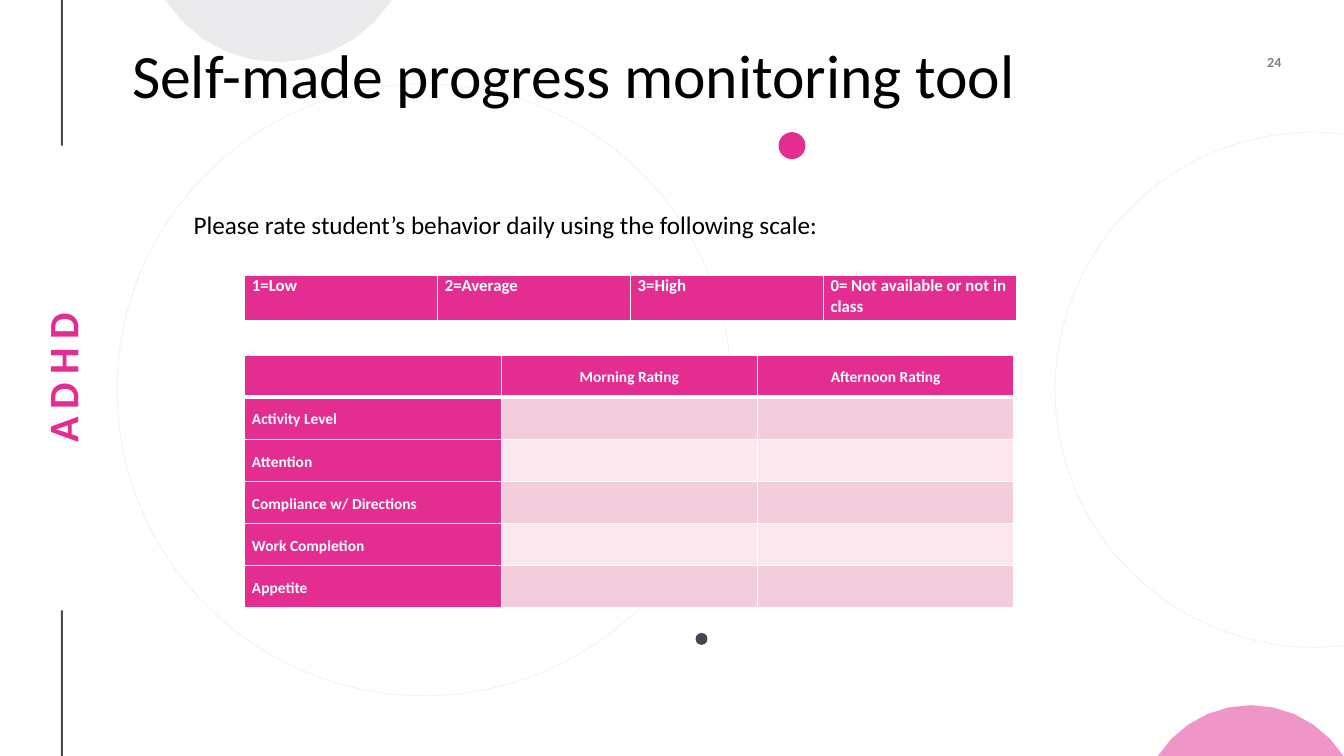
import math
import pptx
import pptx.util
import pptx.dml.color
import pptx.enum.dml
import pptx.enum.shapes
import pptx.enum.text
import pptx.oxml.ns
import lxml.etree

Cm, Pt = pptx.util.Cm, pptx.util.Pt
RGB = pptx.dml.color.RGBColor
PINK = RGB(0xE3, 0x2D, 0x91)
ROSE = RGB(0xF4, 0xCD, 0xDC)
BLUSH = RGB(0xFA, 0xE8, 0xEE)
SLATE = RGB(0x45, 0x45, 0x51)
GREY = RGB(0xD8, 0xD9, 0xDC)
BLACK = RGB(0, 0, 0)
WHITE = RGB(255, 255, 255)
ALIGN = pptx.enum.text.PP_ALIGN
MIDDLE = pptx.enum.text.MSO_ANCHOR.MIDDLE
qn = pptx.oxml.ns.qn


def fade(part, share):
    """Make every solid colour inside an XML part see-through."""
    for tone in part.iter(qn("a:srgbClr")):
        lxml.etree.SubElement(tone, qn("a:alpha"), val=str(share * 1000))


def write(frame, text, size, color, bold=False, align=ALIGN.LEFT):
    """Put one formatted line of text in a frame."""
    frame.text = text
    para = frame.paragraphs[0]
    para.alignment = align
    font = para.runs[0].font
    font.name, font.size, font.bold = "Calibri", Pt(size), bold
    font.color.rgb = color
    return para


deck = pptx.Presentation()
deck.slide_width, deck.slide_height = Cm(33.87), Cm(19.05)
slide = deck.slides.add_slide(deck.slide_layouts[6])
shapes = slide.shapes

# Side rules
for top, end in ((0, 3.67), (15.38, 19.05)):
    rule = shapes.add_connector(pptx.enum.shapes.MSO_CONNECTOR.STRAIGHT,
                                Cm(1.56), Cm(top), Cm(1.56), Cm(end))
    rule.line.color.rgb = BLACK
    rule.line.width = Pt(1.5)
    props = rule._element.spPr
    fade(props, 70)
    lxml.etree.SubElement(props, qn("a:effectLst"))

# Rings and dots
for left, top, wide, high, color in (
        (26.59, 3.33, 13.06, 12.98, None),
        (2.95, 2.11, 15.49, 15.42, None),
        (17.53, 15.95, 0.3, 0.3, SLATE),
        (19.62, 3.33, 0.68, 0.68, PINK)):
    disc = shapes.add_shape(pptx.enum.shapes.MSO_SHAPE.OVAL,
                            Cm(left), Cm(top), Cm(wide), Cm(high))
    disc.shadow.inherit = False
    if color is None:
        disc.fill.background()
        disc.line.color.rgb = BLACK
        disc.line.width = Pt(0.5)
        disc.line.dash_style = pptx.enum.dml.MSO_LINE.ROUND_DOT
        fade(disc._element.spPr, 10)
    else:
        disc.fill.solid()
        disc.fill.fore_color.rgb = color
        disc.line.fill.background()

# Discs cut off by the slide edge: centre, radius, edge, side of the arc
for mid, axis, radius, edge, side, color in (
        (31.52, 20.55, 2.78, 19.05, -1, PINK),
        (7.02, -1.81, 3.38, 0, 1, GREY)):
    half = math.acos(abs(edge - axis) / radius)
    turns = [half * step / 5 for step in range(-5, 6)]
    dots = [(Cm(mid + radius * math.sin(turn)),
             Cm(axis + side * radius * math.cos(turn))) for turn in turns]
    pen = shapes.build_freeform(*dots[0])
    pen.add_line_segments(dots[1:], close=True)
    cap = pen.convert_to_shape()
    cap.shadow.inherit = False
    cap.fill.solid()
    cap.fill.fore_color.rgb = color
    cap.line.fill.background()
    fade(cap._element.spPr, 50)

# Side label
label = shapes.add_textbox(Cm(-4.3), Cm(8.82), Cm(11.71), Cm(1.4))
label.rotation = 270
frame = label.text_frame
frame.word_wrap = True
frame.vertical_anchor = MIDDLE
frame.margin_left = frame.margin_right = Cm(0.05)
frame.margin_top = frame.margin_bottom = Cm(0.05)
para = write(frame, "ADHD", 30, PINK, True, ALIGN.CENTER)
para.runs[0].font._element.set("spc", "600")

# Page number
page = shapes.add_textbox(Cm(30.33), Cm(1.22), Cm(1.96), Cm(0.69))
frame = page.text_frame
frame.word_wrap = True
frame.vertical_anchor = MIDDLE
frame.margin_left = frame.margin_right = 0
frame.margin_top = frame.margin_bottom = 0
para = write(frame, "24", 10, BLACK, True, ALIGN.RIGHT)
fade(para.runs[0].font._element, 50)

# Title
title = shapes.add_textbox(Cm(3.08), Cm(1), Cm(28.47), Cm(1.96))
frame = title.text_frame
frame.word_wrap = True
frame.vertical_anchor = MIDDLE
para = write(frame, "Self-made progress monitoring tool", 44, BLACK)
para.line_spacing = 0.9

# Prompt
prompt = shapes.add_textbox(Cm(4.63), Cm(5.03), Cm(16.43), Cm(1.09))
frame = prompt.text_frame
frame.word_wrap = False
frame.auto_size = pptx.enum.text.MSO_AUTO_SIZE.SHAPE_TO_FIT_TEXT
para = write(frame, "Please rate student’s behavior daily using the following scale:",
             18, BLACK)
para.line_spacing = 1.15
para.space_after = Pt(10)

# Rating sheet and scale
sheet = [["", "Morning Rating", "Afternoon Rating"]]
sheet += [[trait, "", ""] for trait in (
    "Activity Level", "Attention", "Compliance w/ Directions",
    "Work Completion", "Appetite")]
scale = [["1=Low", "2=Average", "3=High", "0= Not available or not in class"]]

for data, top, wide, high, size in ((sheet, 8.95, 6.46, 1.06, 11),
                                    (scale, 6.95, 4.86, 1.17, 12)):
    rows, cols = len(data), len(data[0])
    table = shapes.add_table(rows, cols, Cm(6.17), Cm(top),
                             Cm(wide * cols), Cm(high * rows)).table
    for col in table.columns:
        col.width = Cm(wide)
    for r, line in enumerate(data):
        table.rows[r].height = Cm(high)
        for c, text in enumerate(line):
            cell = table.cell(r, c)
            head = r == 0 or c == 0
            cell.fill.solid()
            cell.fill.fore_color.rgb = PINK if head else (ROSE if r % 2 else BLUSH)
            if text:
                cell.margin_left = cell.margin_right = Cm(0.18)
                cell.margin_top = cell.margin_bottom = 0
                mid = data is sheet and r == 0
                para = write(cell.text_frame, text, size, WHITE, True,
                             ALIGN.CENTER if mid else ALIGN.LEFT)
                if data is sheet:
                    cell.vertical_anchor = MIDDLE
                    para.line_spacing = 1.15
                    para.space_after = Pt(10)
            # White borders, thick under the heading row
            props = cell._tc.get_or_add_tcPr()
            for spot, side in enumerate("LRTB"):
                thick = (r, side) in ((0, "B"), (1, "T"))
                edge = lxml.etree.Element(qn("a:ln" + side),
                                          w=str(Pt(3 if thick else 1)))
                paint = lxml.etree.SubElement(edge, qn("a:solidFill"))
                lxml.etree.SubElement(paint, qn("a:srgbClr"), val=str(WHITE))
                props.insert(spot, edge)

deck.save("out.pptx")
